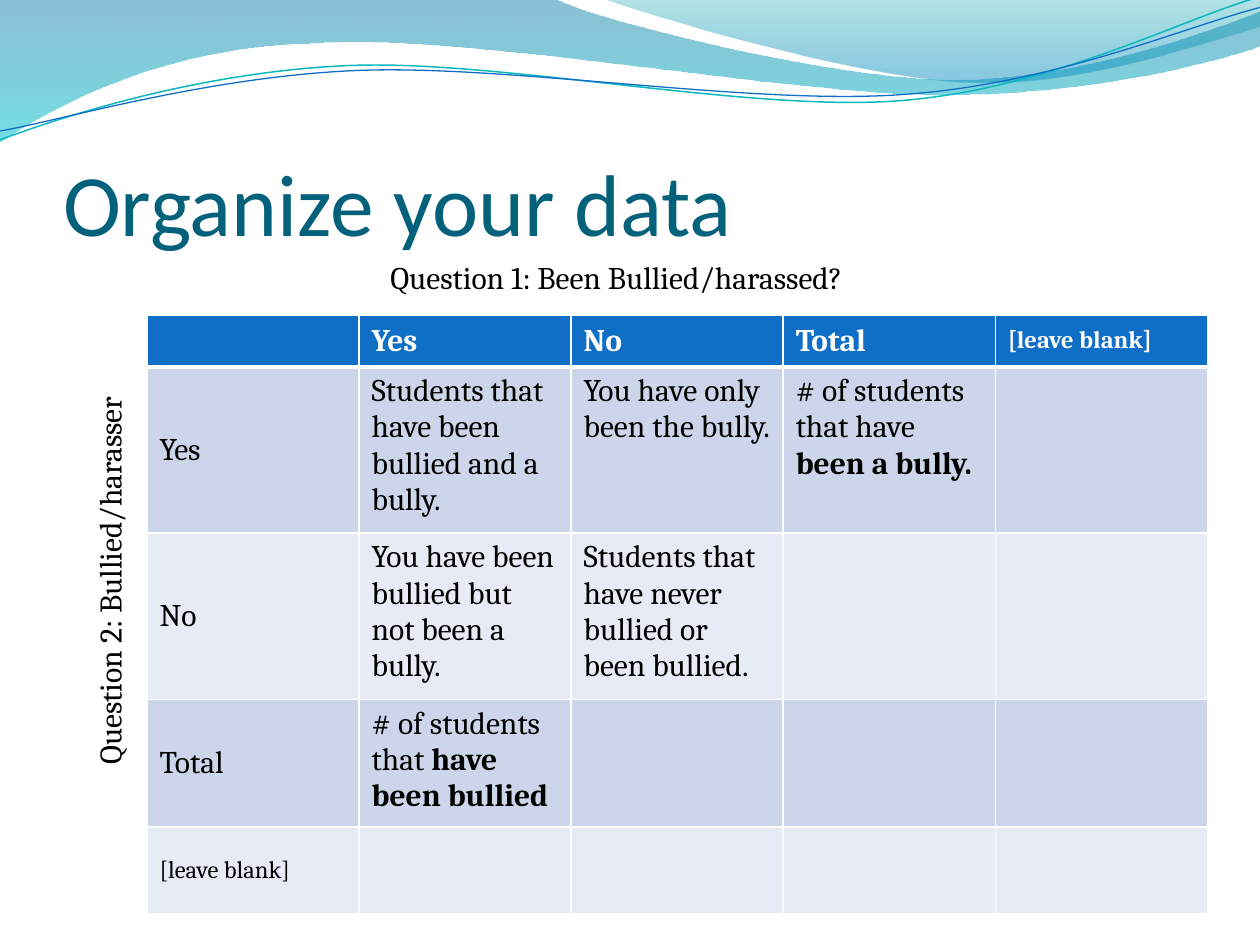
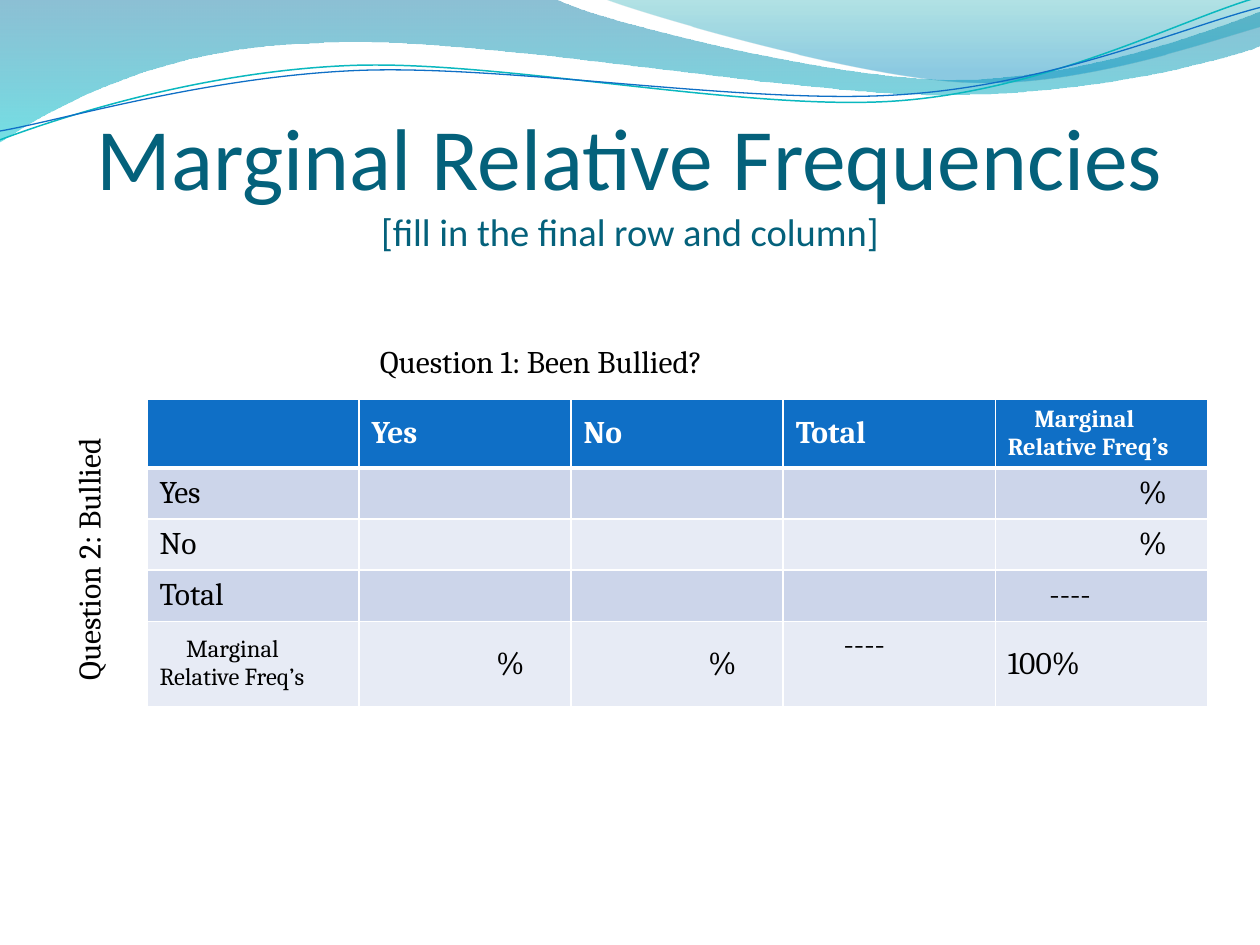
import math
from dataclasses import dataclass

from lxml import etree
from pptx import Presentation
from pptx import util as u
from pptx.dml.color import RGBColor
from pptx.enum import text as t
from pptx.oxml import ns


@dataclass(frozen=True)
class Theme:
    title_font: str = "Calibri"
    body_font: str = "Cambria"
    title: str = "04617B"
    ink: str = "000000"
    white: str = "FFFFFF"
    header: str = "0F6FC6"
    bands: tuple = ("CCD5EA", "E7EBF5")
    teal: str = "0AB8BF"
    title_size: float = 50
    subtitle_size: float = 22
    body_size: float = 18
    small_size: float = 14
    rule: float = 1
    header_rule: float = 3


@dataclass(frozen=True)
class Entry:
    """Words of one table cell; the indent applies to its first line."""
    words: str = ""
    bold_end: str = ""
    size: float = 18
    indent: float = 0
    anchor: t.MSO_ANCHOR = t.MSO_ANCHOR.MIDDLE


THEME = Theme()
WIDTH, HEIGHT = u.Inches(10), u.Inches(7.5)
COLUMNS, ROWS = 120, 90  # page grid
WAVE_TILT = -2.7

# Wave outlines in inches: a start, then curves as (control, control, end);
# a lone point is a straight edge
WAVE_BANDS = (
    ([(0, 0), [(4.4, -0.01)],
      [(4.76, 0.17), (6.64, 0.63), (7.58, 0.63)],
      [(8.53, 0.63), (9.58, 0.26), (10, 0.09)], [(10.01, 0.36)],
      [(9.83, 0.44), (8.7, 0.76), (7.46, 0.75)],
      [(6.22, 0.75), (3.82, 0.28), (2.57, 0.34)],
      [(1.29, 0.36), (0.46, 0.83), (-0.01, 1.13)], [(0, 0)]],
     ((0, "0074A1", 45), (1, "00C6CF", 55))),
    ([(4.79, -0.01),
      [(5.09, 0.11), (6.82, 0.62), (7.69, 0.65)],
      [(8.56, 0.69), (9.61, 0.32), (10, 0.21)], [(10, 0)], [(4.79, -0.01)]],
     ((0, "00A1A9", 30), (0.8, "008BBF", 45))),
)
# Each line also has the centre it is tilted about
WAVE_LINES = (
    ([(0, 1.11),
      [(0.48, 0.93), (1.58, 0.57), (2.77, 0.52)],
      [(3.95, 0.47), (5.93, 0.89), (7.13, 0.8)],
      [(8.33, 0.71), (9.38, 0.15), (9.98, -0.02)]], (4.99, 0.58), THEME.teal, 0.85),
    ([(0, 1.04),
      [(0.47, 0.96), (1.64, 0.61), (2.83, 0.56)],
      [(4.03, 0.51), (5.97, 0.84), (7.17, 0.75)],
      [(8.36, 0.67), (9.41, 0.21), (10, 0.06)]], (5, 0.59), THEME.header, 0.75),
)


def rgb(color):
    return RGBColor.from_string(color)


def across(columns):
    return round(WIDTH * columns / COLUMNS)


def down(rows):
    return round(HEIGHT * rows / ROWS)


def box(left, top, width, height):
    return across(left), down(top), across(width), down(height)


def assign(target, values):
    for name, value in values.items():
        setattr(target, name, value)


def add_run(paragraph, words, size, color=THEME.ink, name=THEME.body_font, bold=False):
    run = paragraph.add_run()
    run.text = words
    assign(run.font, {"size": u.Pt(size), "name": name, "bold": bold})
    run.font.color.rgb = rgb(color)


# Waves at the top of every slide
def turn(point, centre, degrees):
    angle = math.radians(degrees)
    x, y = (a - b for a, b in zip(point, centre))
    return (centre[0] + x * math.cos(angle) - y * math.sin(angle),
            centre[1] + x * math.sin(angle) + y * math.cos(angle))


def add_outline(slide, outline, close):
    """Lay out every knot as a straight edge, then bend each curve's three into one."""
    start, *pieces = outline
    builder = slide.shapes.build_freeform(*map(u.Inches, start))
    builder.add_line_segments([tuple(map(u.Inches, point)) for piece in pieces
                               for point in piece], close=close)
    wave = builder.convert_to_shape()
    wave.shadow.inherit = False
    edges = iter(list(wave.element.spPr.iter(ns.qn("a:lnTo"))))
    for piece in pieces:
        knots = [next(edges) for _ in piece]
        if len(knots) == 3:
            curve = etree.Element(ns.qn("a:cubicBezTo"))
            knots[0].addprevious(curve)
            for knot in knots:
                curve.append(knot[0])
                knot.getparent().remove(knot)
    return wave


def add_wave_band(slide, outline, stops):
    band = add_outline(slide, outline, True)
    band.line.fill.background()
    band.fill.gradient()
    band.fill.gradient_angle = 270
    for stop, (position, color, _) in zip(band.fill.gradient_stops, stops):
        stop.position = position
        stop.color.rgb = rgb(color)
    for tint, (_, _, opacity) in zip(band.element.spPr.iter(ns.qn("a:srgbClr")), stops):
        etree.SubElement(tint, ns.qn("a:alpha")).set("val", str(opacity * 1000))
    return band


def add_wave_line(slide, outline, centre, color, weight):
    start, *curves = outline
    level = [turn(start, centre, -WAVE_TILT)]
    level += [[turn(point, centre, -WAVE_TILT) for point in curve] for curve in curves]
    line = add_outline(slide, level, False)
    line.rotation = WAVE_TILT
    line.fill.background()
    line.line.color.rgb = rgb(color)
    line.line.width = u.Pt(weight)
    return line


def move_waves_to_master(prs, slide):
    """Draw the waves once and hand them to the master, behind everything."""
    waves = [add_wave_band(slide, *band) for band in WAVE_BANDS]
    waves += [add_wave_line(slide, *line) for line in WAVE_LINES]
    for place, wave in enumerate(waves, start=2):
        prs.slide_master.shapes.element.insert(place, wave.element)


# Title and axis captions
def set_title(slide, words, subtitle="", align=t.PP_ALIGN.LEFT):
    title = slide.shapes.title
    assign(title, dict(zip(("left", "top", "width", "height"), box(6, 9.2, 108, 15))))
    assign(title.text_frame, {
        "vertical_anchor": t.MSO_ANCHOR.BOTTOM, "auto_size": t.MSO_AUTO_SIZE.NONE,
        "word_wrap": True, "margin_left": 0, "margin_right": 0,
        "margin_top": u.Inches(0.05), "margin_bottom": 0})
    heading = title.text_frame.paragraphs[0]
    heading.alignment = align
    add_run(heading, words, THEME.title_size, THEME.title, THEME.title_font)
    if subtitle:
        heading.add_line_break()
        add_run(heading, subtitle, THEME.subtitle_size, THEME.title, THEME.title_font)


def add_caption(slide, words, place, upward=False):
    frame = slide.shapes.add_textbox(*box(*place)).text_frame
    assign(frame, {"word_wrap": True, "auto_size": t.MSO_AUTO_SIZE.SHAPE_TO_FIT_TEXT})
    if upward:
        frame._txBody.bodyPr.set("vert", "vert270")
    add_run(frame.paragraphs[0], words, THEME.body_size)


# Two-way table
def set_borders(cell, weights):
    properties = cell._tc.get_or_add_tcPr()
    for side, weight in weights.items():
        edge = etree.SubElement(properties, ns.qn(f"a:ln{side}"), w=str(u.Pt(weight)))
        fill = etree.SubElement(edge, ns.qn("a:solidFill"))
        etree.SubElement(fill, ns.qn("a:srgbClr"), val=THEME.white)


def fill_cell(cell, entry, row):
    is_header = row == 0
    weights = dict.fromkeys("LRTB", THEME.rule)
    if is_header:
        weights["B"] = THEME.header_rule
    set_borders(cell, weights)
    cell.fill.solid()
    cell.fill.fore_color.rgb = rgb(THEME.header if is_header else THEME.bands[(row - 1) % 2])
    cell.vertical_anchor = entry.anchor
    color = THEME.white if is_header else THEME.ink
    first, *others = entry.words.split("\n")
    paragraph = cell.text_frame.paragraphs[0]
    if entry.indent:
        paragraph._p.get_or_add_pPr().set("indent", str(u.Inches(entry.indent)))
    for words, bold in ((first, is_header), (entry.bold_end, True)):
        if words:
            add_run(paragraph, words, entry.size, color, bold=bold)
    for words in others:
        add_run(cell.text_frame.add_paragraph(), words, entry.size, color, bold=is_header)


def add_two_way_table(slide, top, heights, entries):
    size = len(entries)
    table = slide.shapes.add_table(size, size, *box(14, top, 101, sum(heights))).table
    for row, height in enumerate(heights):
        table.rows[row].height = down(height)
        for column, entry in enumerate(entries[row]):
            fill_cell(table.cell(row, column), entry, row)


def labelled(last_column, last_row, bodies):
    """Put the shared headings around four rows of body entries."""
    shared = [Entry("Yes"), Entry("No"), Entry("Total")]
    return [[Entry(), *shared, last_column]] + [
        [head, *body] for head, body in zip([*shared, last_row], bodies)]


def note(words="", bold_end=""):
    return Entry(words, bold_end, anchor=t.MSO_ANCHOR.TOP)


def small(words, indent=0):
    return Entry(words, size=THEME.small_size, indent=indent)


def main():
    prs = Presentation()
    assign(prs, {"slide_width": WIDTH, "slide_height": HEIGHT})
    title_only = prs.slide_layouts[5]
    blank = Entry()

    # Slide 1: what each count means
    organize = prs.slides.add_slide(title_only)
    move_waves_to_master(prs, organize)
    set_title(organize, "Organize your data")
    meanings = [
        [note("Students that have been bullied and a bully."),
         note("You have only been the bully."),
         note("# of students that have ", "been a bully."), blank],
        [note("You have been bullied but not been a bully."),
         note("Students that have never bullied or been bullied."), blank, blank],
        [note("# of students that ", "have been bullied"), blank, blank, blank],
        [blank] * 4,
    ]
    unused = small("[leave blank]")
    add_two_way_table(organize, 30, (4.95, 15.84, 15.84, 12.15, 8.22),
                      labelled(unused, unused, meanings))
    add_caption(organize, "Question 1: Been Bullied/harassed?", (36, 24, 49, 4.8))
    add_caption(organize, "Question 2: Bullied/harasser", (8, 26, 6, 48), upward=True)

    # Slide 2: shares to fill in
    marginal = prs.slides.add_slide(title_only)
    set_title(marginal, "Marginal Relative Frequencies",
              "[fill in the final row and column]", t.PP_ALIGN.CENTER)
    row_share, column_share = Entry("%", indent=1.04), Entry("%", indent=0.99)
    shares = [
        [blank, blank, blank, row_share],
        [blank, blank, blank, row_share],
        [blank, blank, blank, Entry("----", indent=0.33)],
        [column_share, column_share,
         Entry("----", indent=0.38, anchor=t.MSO_ANCHOR.TOP), Entry("100%")],
    ]
    add_two_way_table(marginal, 38, (6.4, 4.87, 4.87, 4.87, 8.1),
                      labelled(small("Marginal Relative Freq’s", 0.21),
                               small("Marginal\nRelative Freq’s", 0.21), shares))
    add_caption(marginal, "Question 1: Been Bullied?", (35, 32, 41, 4.8))
    add_caption(marginal, "Question 2: Bullied", (6, 30, 6, 36), upward=True)

    prs.save("out.pptx")


if __name__ == "__main__":
    main()
